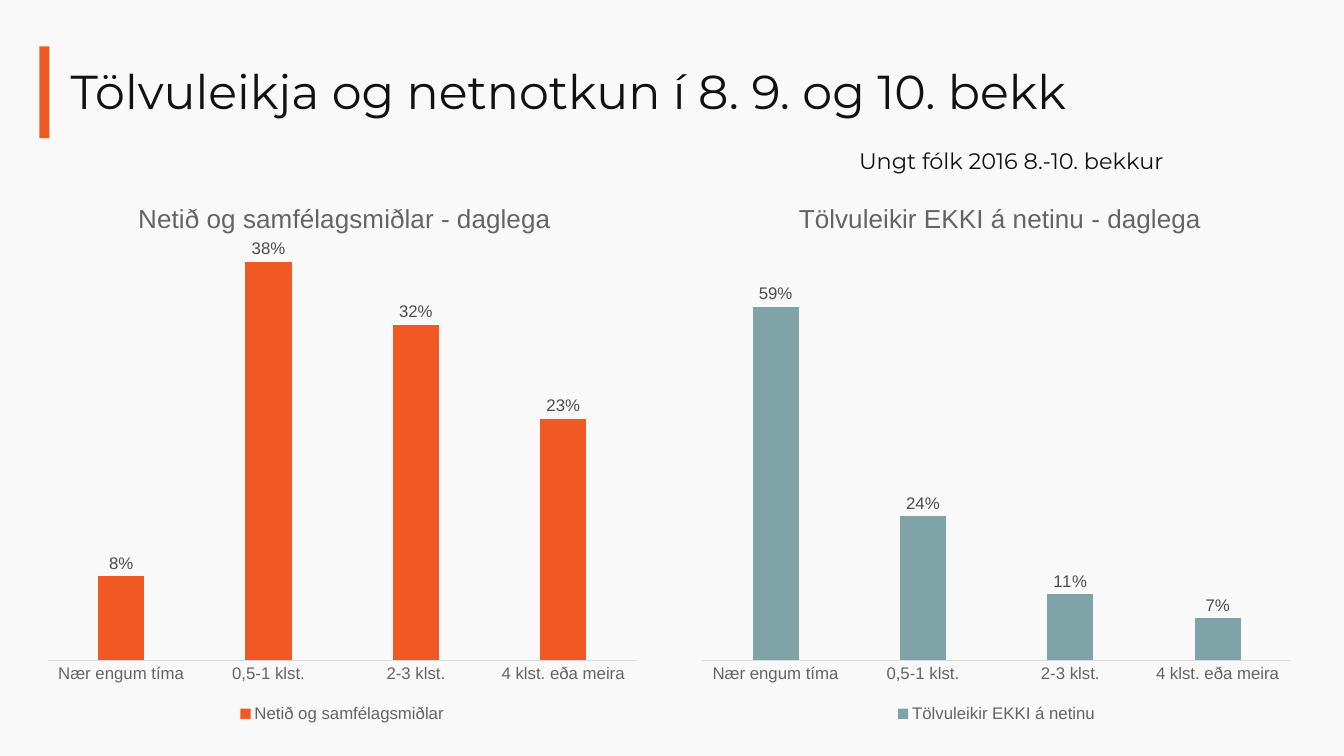
from dataclasses import dataclass

from lxml.etree import SubElement
from pptx import Presentation
from pptx.chart.data import CategoryChartData
from pptx.dml.color import RGBColor
from pptx.enum.chart import XL_CHART_TYPE, XL_LABEL_POSITION, XL_LEGEND_POSITION, XL_TICK_MARK
from pptx.enum.shapes import MSO_SHAPE
from pptx.enum.text import MSO_ANCHOR, PP_ALIGN
from pptx.oxml.ns import qn
from pptx.util import Inches, Pt


@dataclass(frozen=True)
class Theme:
    background: str = "F9F9F9"
    text: str = "111111"
    accent: str = "F15924"
    teal: str = "7FA3A7"
    muted: str = "646464"
    label: str = "4C4C4C"
    axis: str = "DBDBDB"
    heading_font: str = "Montserrat"
    chart_font: str = "Arial"
    title_size: float = 34
    note_size: float = 16
    chart_title_size: float = 18.6
    chart_size: float = 12


THEME = Theme()
HOURS = ["Nær engum tíma", "0,5-1 klst.", "2-3 klst.", "4 klst. eða meira"]


def rgb(value):
    return RGBColor.from_string(value)


def style_font(font, *, size, color, name):
    font.size = Pt(size)
    font.bold = False
    font.name = name
    font.color.rgb = rgb(color)


def write_text(tf, text, *, size, color=THEME.text, font=THEME.heading_font,
               align=PP_ALIGN.LEFT, spacing=1.0):
    p = tf.paragraphs[0]
    p.alignment = align
    p.line_spacing = spacing
    r = p.add_run()
    r.text = text
    style_font(r.font, size=size, color=color, name=font)


def set_layout(parent, position, **fractions):
    layout = parent.find(qn("c:layout"))
    if layout is None:
        layout = parent.makeelement(qn("c:layout"), {})
        parent.insert(position, layout)
    manual = SubElement(layout, qn("c:manualLayout"))
    if "w" in fractions:
        SubElement(manual, qn("c:layoutTarget"), val="inner")
    for mode in ("xMode", "yMode"):
        SubElement(manual, qn(f"c:{mode}"), val="edge")
    for key, value in fractions.items():
        SubElement(manual, qn(f"c:{key}"), val=str(value))


def add_header(s, left, top, width, height):
    bar = s.shapes.add_shape(MSO_SHAPE.RECTANGLE, Inches(left), Inches(top + 0.06),
                             Inches(0.1), Inches(0.91))
    bar.shadow.inherit = False
    bar.fill.solid()
    bar.fill.fore_color.rgb = rgb(THEME.accent)
    bar.line.fill.background()

    title = s.shapes.title
    title.left, title.top = Inches(left + 0.21), Inches(top)
    title.width, title.height = Inches(width - 0.21), Inches(height)
    tf = title.text_frame
    tf.word_wrap = True
    tf.vertical_anchor = MSO_ANCHOR.MIDDLE
    write_text(tf, "Tölvuleikja og netnotkun í 8. 9. og 10. bekk",
               size=THEME.title_size, spacing=0.9)


def add_note(s, left, top, width, height):
    sp = s.shapes.add_textbox(Inches(left), Inches(top), Inches(width), Inches(height))
    tf = sp.text_frame
    tf.word_wrap = True
    tf.margin_left = tf.margin_right = tf.margin_top = tf.margin_bottom = 0
    write_text(tf, "Ungt fólk 2016 8.-10. bekkur", size=THEME.note_size)


def add_usage_chart(s, left, top, width, height, *, name, values, color, maximum, title_x):
    data = CategoryChartData(number_format="0%")
    data.categories = HOURS
    data.add_series(name, values)
    chart = s.shapes.add_chart(XL_CHART_TYPE.COLUMN_CLUSTERED, Inches(left), Inches(top),
                               Inches(width), Inches(height), data).chart
    style_font(chart.font, size=THEME.chart_size, color=THEME.muted, name=THEME.chart_font)

    chart.has_title = True
    write_text(chart.chart_title.text_frame, f"{name} - daglega", size=THEME.chart_title_size,
               color=THEME.muted, font=THEME.chart_font, align=PP_ALIGN.CENTER)
    set_layout(chart.chart_title._element, 1, x=title_x, y=0.04)
    set_layout(chart._chartSpace.chart.plotArea, 0, x=0.02, y=0.12, w=0.96, h=0.76)

    chart.has_legend = True
    chart.legend.position = XL_LEGEND_POSITION.BOTTOM
    chart.legend.include_in_layout = False

    values_axis = chart.value_axis
    values_axis.visible = False
    values_axis.has_major_gridlines = False
    values_axis.minimum_scale = 0
    values_axis.maximum_scale = maximum
    hours_axis = chart.category_axis
    hours_axis.major_tick_mark = XL_TICK_MARK.NONE
    hours_axis.format.line.color.rgb = rgb(THEME.axis)
    hours_axis.format.line.width = Pt(0.75)

    plot = chart.plots[0]
    plot.vary_by_categories = False
    plot.gap_width = 219
    plot.overlap = -27
    fill = plot.series[0].format.fill
    fill.solid()
    fill.fore_color.rgb = rgb(color)
    plot.has_data_labels = True
    labels = plot.data_labels
    labels.show_value = True
    labels.position = XL_LABEL_POSITION.OUTSIDE_END
    labels.number_format = "0%"
    labels.number_format_is_linked = False
    style_font(labels.font, size=THEME.chart_size, color=THEME.label, name=THEME.chart_font)


def main():
    prs = Presentation()
    prs.slide_width, prs.slide_height = Inches(13.33), Inches(7.5)
    s = prs.slides.add_slide(prs.slide_layouts[5])
    s.background.fill.solid()
    s.background.fill.fore_color.rgb = rgb(THEME.background)

    add_header(s, 0.39, 0.4, 12.55, 1.06)
    usage = [
        dict(name="Netið og samfélagsmiðlar", values=[0.08, 0.38, 0.32, 0.23],
             color=THEME.accent, maximum=0.4, title_x=0.16),
        dict(name="Tölvuleikir EKKI á netinu", values=[0.59, 0.24, 0.11, 0.07],
             color=THEME.teal, maximum=0.7, title_x=0.17),
    ]
    for i, group in enumerate(usage):
        add_usage_chart(s, 0.35 + 6.49 * i, 1.73, 6.09, 5.48, **group)
    add_note(s, 8.52, 1.46, 4.6, 0.27)
    prs.save("out.pptx")


if __name__ == "__main__":
    main()
